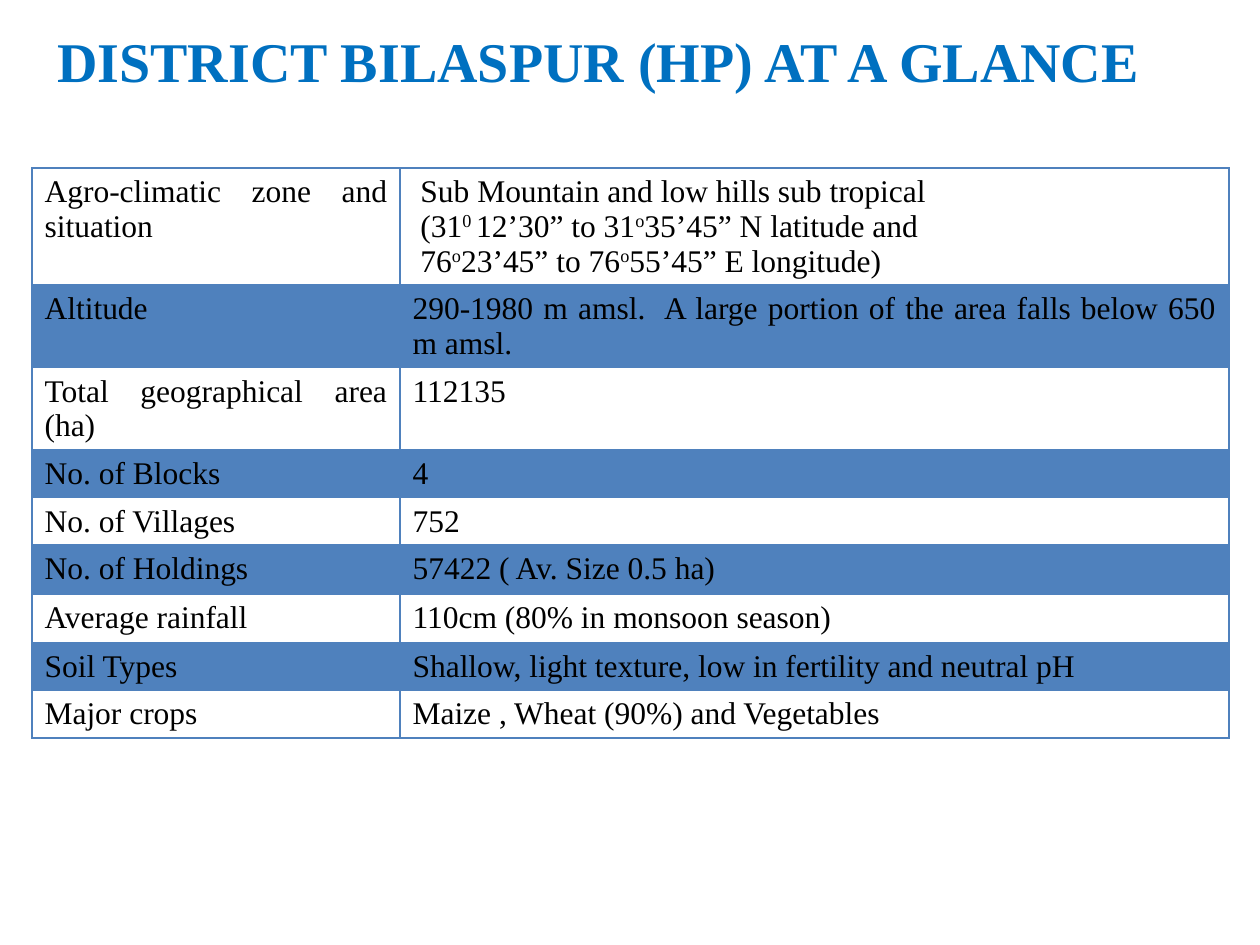
from dataclasses import dataclass

from lxml.etree import SubElement as Sub
from pptx import Presentation
from pptx.dml.color import RGBColor as RGB
from pptx.enum.text import MSO_ANCHOR as Anchor, PP_ALIGN as Align
from pptx.oxml.ns import qn
from pptx.util import Pt

PX = 7257  # EMU in one px, at 126 px to the inch


@dataclass(frozen=True)
class Theme:
    font: str = "Times New Roman"
    title: str = "0070C0"
    text: str = "000000"
    line: str = "4F81BD"
    big: int = 32
    body: int = 18
    tint: int = 20  # percent opacity of the bands
    thin: int = 1
    thick: int = 2


@dataclass(frozen=True)
class Row:
    label: str
    value: str  # text between ^ marks is raised, each line is a paragraph
    high: int = 47


THEME = Theme()
COLS = (368, 829)
ROWS = (
    Row("Agro-climatic zone and situation",
        " Sub Mountain and low hills sub tropical\n"
        " (31^0 ^12’30” to 31^o^35’45” N latitude and\n"
        " 76^o^23’45” to 76^o^55’45” E longitude)", 117),
    Row("Altitude", "290-1980 m amsl.  A large portion of the area "
        "falls below 650 m amsl.", 82),
    Row("Total geographical area (ha)", "112135", 82),
    Row("No. of Blocks", "4"),
    Row("No. of Villages", "752"),
    Row("No. of Holdings", "57422 ( Av. Size 0.5 ha)", 49),
    Row("Average rainfall", "110cm (80% in monsoon season)", 49),
    Row("Soil Types", "Shallow, light texture, low in fertility and neutral pH"),
    Row("Major crops", "Maize , Wheat (90%) and Vegetables"),
)


def style(run, size: int, color: str, bold: bool = False) -> None:
    run.font.name = THEME.font
    run.font.size = Pt(size)
    run.font.bold = bold
    run.font.color.rgb = RGB.from_string(color)


def write(cell, text: str) -> None:
    frame = cell.text_frame
    frame.text = "\n".join("" for _ in text.split("\n"))
    for para, line in zip(frame.paragraphs, text.split("\n")):
        para.alignment = Align.JUSTIFY
        for i, part in enumerate(line.split("^")):
            run = para.add_run()
            run.text = part
            style(run, THEME.body, THEME.text)
            if i % 2:
                run.font._element.set("baseline", "30000")


def edge(cell, side: str, width: int) -> None:
    line = Sub(cell._tc.get_or_add_tcPr(), qn(f"a:ln{side}"), w=str(Pt(width)))
    fill = Sub(line, qn("a:solidFill"))
    Sub(fill, qn("a:srgbClr"), val=THEME.line)


def paint(cell, band: bool) -> None:
    if not band:
        cell.fill.background()
        return
    cell.fill.solid()
    cell.fill.fore_color.rgb = RGB.from_string(THEME.line)
    color = cell._tc.tcPr.find(f".//{qn('a:solidFill')}/{qn('a:srgbClr')}")
    Sub(color, qn("a:alpha"), val=str(THEME.tint * 1000))


def draw_title(slide, text: str) -> None:
    title = slide.shapes.title
    title.left, title.top, title.width, title.height = (
        n * PX for n in (0, 21, 1197, 78))
    frame = title.text_frame
    frame.text = text
    frame.vertical_anchor = Anchor.MIDDLE
    para = frame.paragraphs[0]
    para.alignment = Align.CENTER
    style(para.runs[0], THEME.big, THEME.title, True)


def draw_table(slide, left: int, top: int) -> None:
    high = sum(row.high for row in ROWS)
    table = slide.shapes.add_table(
        len(ROWS), len(COLS), left * PX, top * PX,
        sum(COLS) * PX, high * PX).table
    table.first_row = table.horz_banding = False
    for col, wide in zip(table.columns, COLS):
        col.width = wide * PX
    for r, row in enumerate(ROWS):
        table.rows[r].height = row.high * PX
        for c, text in enumerate((row.label, row.value)):
            cell = table.cell(r, c)
            write(cell, text)
            # The rule under the first row is heavier
            for side in "LRTB":
                heavy = (r, side) in ((0, "B"), (1, "T"))
                edge(cell, side, THEME.thick if heavy else THEME.thin)
            paint(cell, r % 2 == 1)


def main() -> None:
    deck = Presentation()
    deck.slide_width, deck.slide_height = 1260 * PX, 945 * PX
    slide = deck.slides.add_slide(deck.slide_layouts[5])
    # Heading
    draw_title(slide, "DISTRICT BILASPUR (HP) AT A GLANCE")
    # District facts
    draw_table(slide, 32, 168)
    deck.save("out.pptx")


if __name__ == "__main__":
    main()
